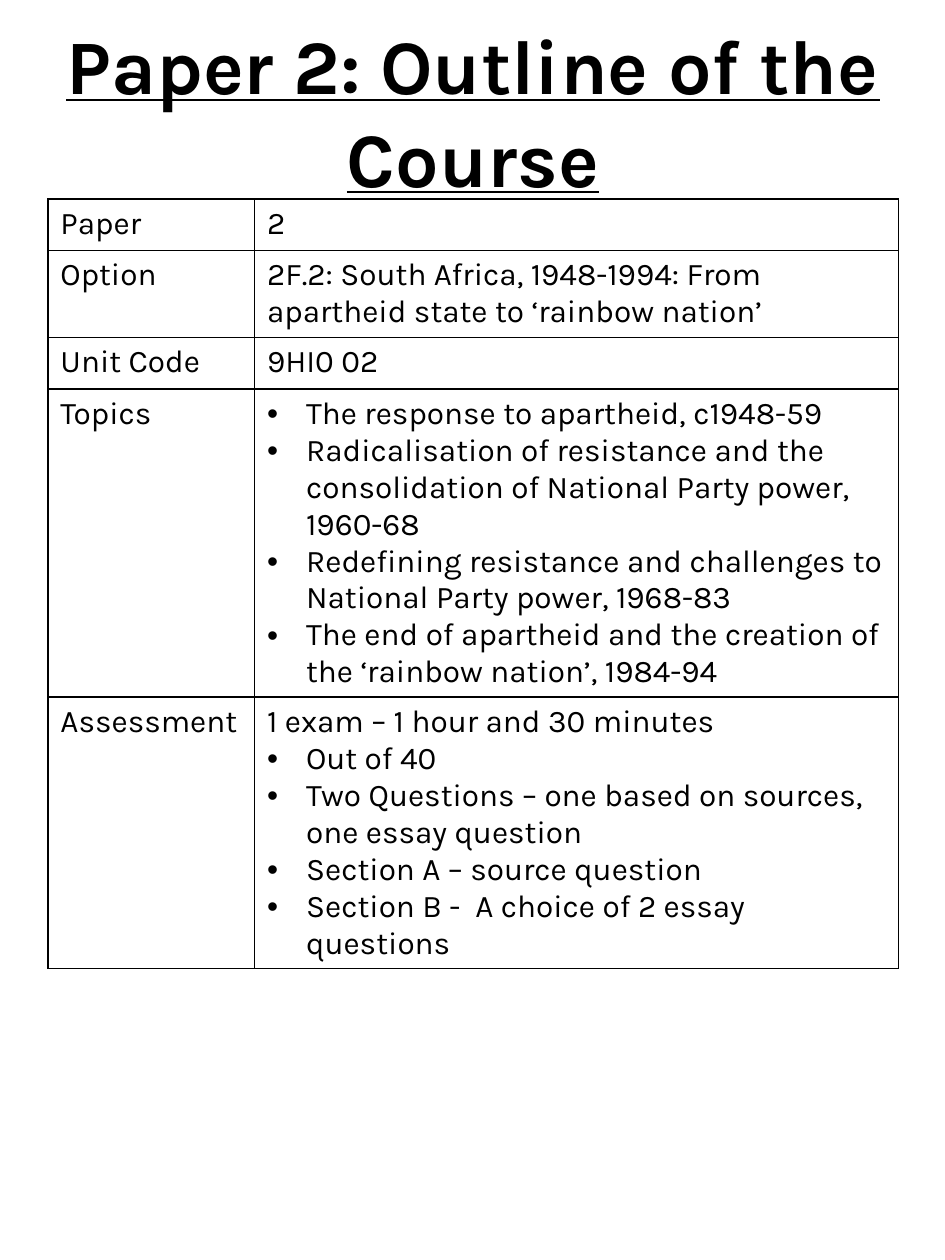
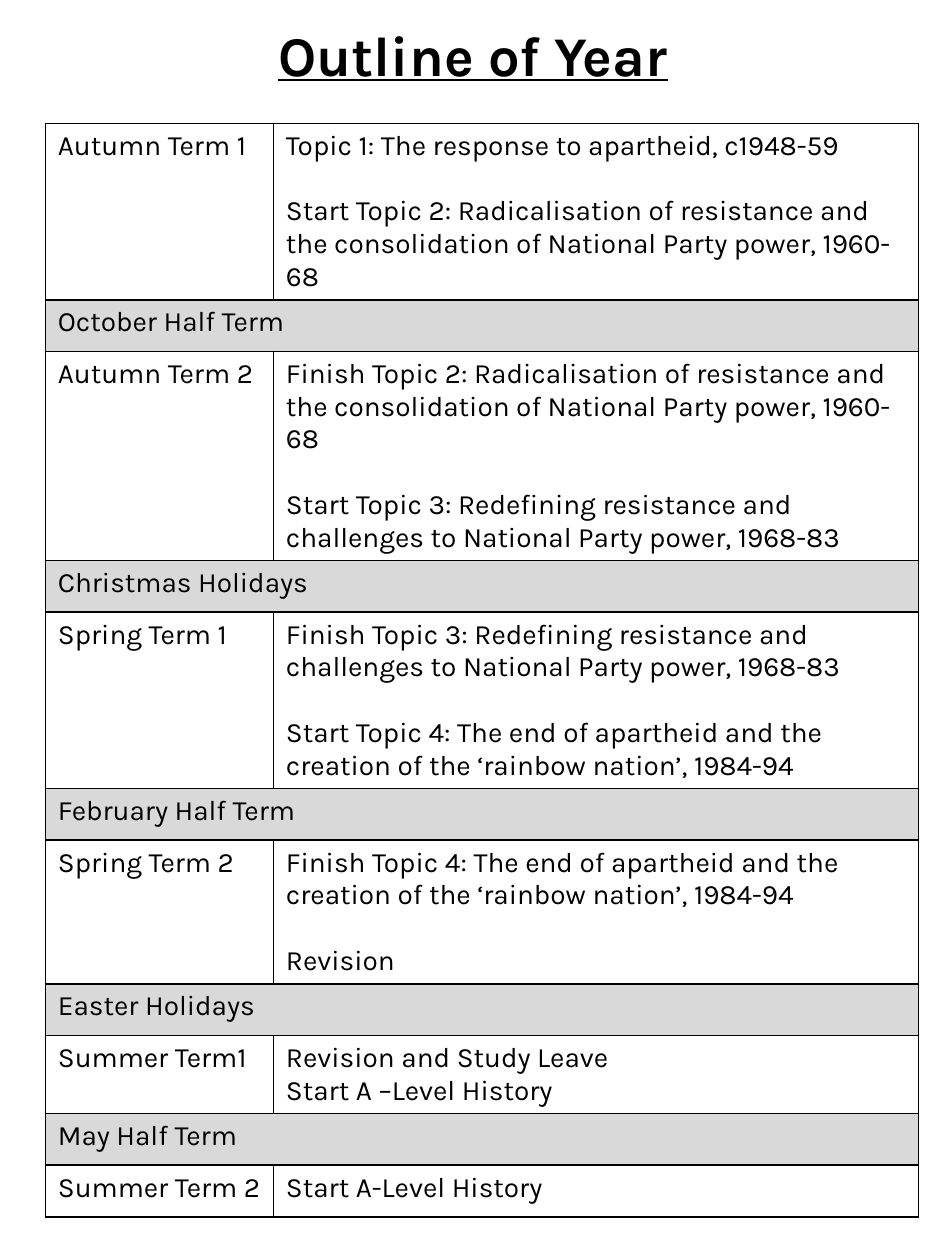
"""Build two course outline slides, each a title above a bordered table."""
from lxml import etree
from pptx import Presentation
from pptx.dml.color import RGBColor
from pptx.enum.text import MSO_ANCHOR, MSO_AUTO_SIZE, PP_ALIGN
from pptx.oxml.ns import qn
from pptx.util import Inches, Pt

MIDDLE = MSO_ANCHOR.MIDDLE
NO_FIT = MSO_AUTO_SIZE.NONE
CENTER = PP_ALIGN.CENTER
BLACK = RGBColor(0x00, 0x00, 0x00)
GREY = RGBColor(0xD9, 0xD9, 0xD9)
FONT = "Karla"
ROW = 0.41
INDENT = Inches(0.31)
GAP = Pt(18.7)

PLAIN, BULLET, SPACED = "plain", "bullet", "spaced"

ONE = "The response to apartheid, c1948-59"
TWO = "Radicalisation of resistance and the consolidation of National Party power, 1960-68"
THREE = "Redefining resistance and challenges to National Party power, 1968-83"
FOUR = "The end of apartheid and the creation of the ‘rainbow nation’, 1984-94"

COURSE = [
    ("Paper", [(PLAIN, "2")]),
    ("Option", [(PLAIN, "2F.2: South Africa, 1948-1994: From apartheid state to ‘rainbow nation’")]),
    ("Unit Code", [(PLAIN, "9HI0 02")]),
    ("Topics", [(BULLET, topic) for topic in (ONE, TWO, THREE, FOUR)]),
    ("Assessment", [
        (PLAIN, "1 exam – 1 hour and 30 minutes"),
        (BULLET, "Out of 40"),
        (BULLET, "Two Questions – one based on sources, one essay question"),
        (BULLET, "Section A – source question"),
        (BULLET, "Section B -  A choice of 2 essay questions"),
    ]),
]

YEAR = [
    ("Autumn Term 1", [(PLAIN, f"Topic 1: {ONE}"), (SPACED, f"Start Topic 2: {TWO}")]),
    ("October Half Term", None),
    ("Autumn Term 2", [(PLAIN, f"Finish Topic 2: {TWO}"), (SPACED, f"Start Topic 3: {THREE}")]),
    ("Christmas Holidays", None),
    ("Spring Term 1", [(PLAIN, f"Finish Topic 3: {THREE}"), (SPACED, f"Start Topic 4: {FOUR}")]),
    ("February Half Term", None),
    ("Spring Term 2", [(PLAIN, f"Finish Topic 4: {FOUR}"), (SPACED, "Revision")]),
    ("Easter Holidays", None),
    ("Summer Term1", [(PLAIN, "Revision and Study Leave"), (PLAIN, "Start A –Level History")]),
    ("May Half Term", None),
    ("Summer Term 2", [(PLAIN, "Start A-Level History")]),
]

SLIDES = [
    {"title": "Paper 2: Outline of the Course", "box": (0.38, 0.04, 6.75, 1.67), "head": 44,
     "rows": COURSE, "spot": (0.38, 1.58), "cols": (1.64, 5.11), "size": 18},
    {"title": "Outline of Year", "box": (0.38, -0.2, 6.75, 1.26), "head": 32,
     "rows": YEAR, "spot": (0.36, 0.98), "cols": (1.81, 5.12), "size": 16},
]


def style(para, size, strong=False):
    for run in para.runs:
        font = run.font
        font.name, font.size, font.color.rgb = FONT, Pt(size), BLACK
        if strong:
            font.bold = font.underline = True


def add_title(slide, text, box, size):
    title = slide.shapes.title
    title.left, title.top, title.width, title.height = map(Inches, box)
    frame = title.text_frame
    frame.text = text
    frame.auto_size, frame.vertical_anchor = NO_FIT, MIDDLE
    para = frame.paragraphs[0]
    para.alignment = CENTER
    style(para, size, strong=True)


def add_border(cell):
    props = cell._tc.get_or_add_tcPr()
    for side in ("lnL", "lnR", "lnT", "lnB"):
        line = etree.SubElement(props, qn(f"a:{side}"), w=str(Pt(1)))
        fill = etree.SubElement(line, qn("a:solidFill"))
        etree.SubElement(fill, qn("a:srgbClr"), val=str(BLACK))


def add_bullet(para):
    props = para._p.get_or_add_pPr()
    props.set("marL", str(INDENT))
    props.set("indent", str(-INDENT))
    etree.SubElement(props, qn("a:buFont"), typeface="Arial")
    etree.SubElement(props, qn("a:buChar"), char="•")


def fill_text(cell, parts, size):
    frame = cell.text_frame
    for i, (kind, text) in enumerate(parts):
        para = frame.add_paragraph() if i else frame.paragraphs[0]
        para.text = text
        if kind == BULLET:
            add_bullet(para)
        elif kind == SPACED:
            para.space_before = GAP
        style(para, size)


def add_grid(slide, rows, spot, cols, size):
    area = (*spot, sum(cols), ROW * len(rows))
    grid = slide.shapes.add_table(len(rows), len(cols), *map(Inches, area)).table
    grid.first_row = grid.horz_banding = False
    for col, width in zip(grid.columns, cols):
        col.width = Inches(width)
    for i, (label, parts) in enumerate(rows):
        left, right = grid.cell(i, 0), grid.cell(i, 1)
        for cell in (left, right):
            add_border(cell)
            if parts:
                cell.fill.background()
            else:
                cell.fill.solid()
                cell.fill.fore_color.rgb = GREY
        fill_text(left, [(PLAIN, label)], size)
        if parts:
            fill_text(right, parts, size)
        else:
            left.merge(right)


def main():
    deck = Presentation()
    deck.slide_width, deck.slide_height = Inches(7.5), Inches(10)
    for page in SLIDES:
        slide = deck.slides.add_slide(deck.slide_layouts[5])
        add_title(slide, page["title"], page["box"], page["head"])
        add_grid(slide, page["rows"], page["spot"], page["cols"], page["size"])
    deck.save("out.pptx")


if __name__ == "__main__":
    main()
